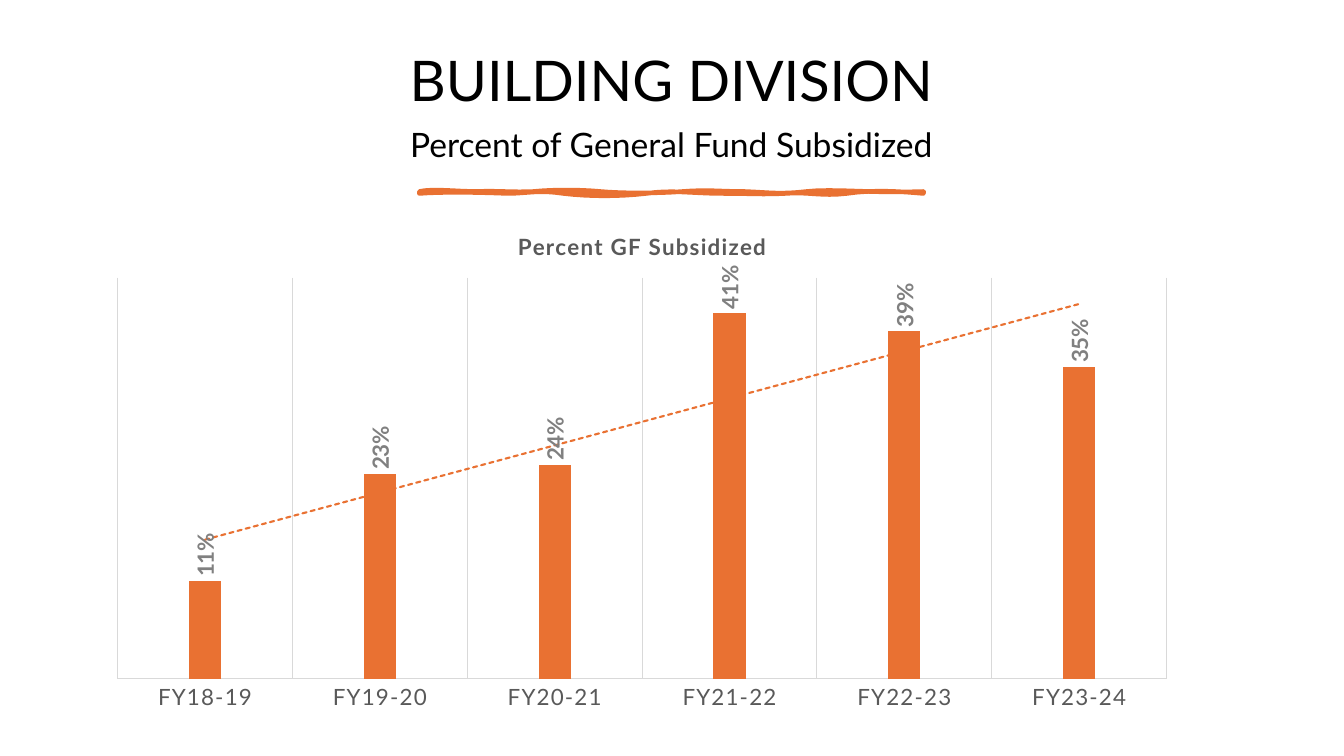
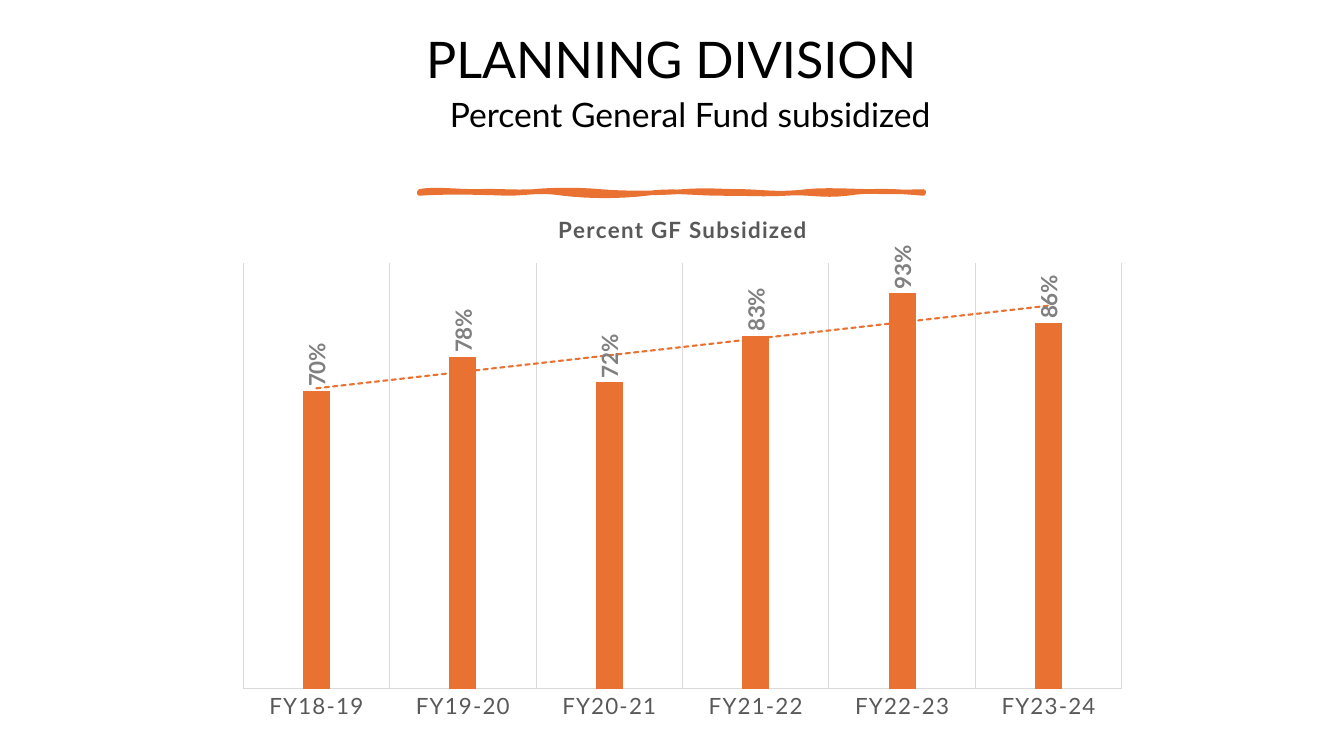
"""Build two slides charting the General Fund share of division budgets."""
import dataclasses

import lxml.etree
import pptx
import pptx.chart.data
import pptx.dml.color
import pptx.enum.chart
import pptx.enum.text
import pptx.oxml
import pptx.oxml.ns
import pptx.util

Pt = pptx.util.Pt


@dataclasses.dataclass(frozen=True)
class Theme:
    font: str = "Lato"
    black: str = "000000"
    accent: str = "E97132"
    axis_text: str = "595959"
    label_text: str = "808080"
    grid: str = "D9D9D9"
    subtitle_size: int = 24
    chart_size: int = 16
    base_size: int = 10
    letter_spacing: str = "100"


theme = Theme()

YEARS = ["FY18-19", "FY19-20", "FY20-21", "FY21-22", "FY22-23", "FY23-24"]
SERIES_NAME = "Percent GF Subsidized"
TITLE_LEFT, TEXT_WIDTH = 50, 859

SLIDES = [
    {
        "title": ("BUILDING DIVISION", 40, TITLE_LEFT, 33, 53),
        "subtitle": ("Percent of General Fund Subsidized", theme.subtitle_size, TITLE_LEFT, 86, 38),
        "chart": (68.4, 151.2, 780.5, 362.9),
        "plot": (0.02, 0.13, 0.96, 0.79),
        "values": [0.11, 0.23, 0.24, 0.41, 0.39, 0.35],
        "maximum": 0.45,
    },
    {
        "title": ("PLANNING DIVISION", 36, TITLE_LEFT, 21.6, 45.4),
        "subtitle": ("Percent General Fund subsidized", theme.subtitle_size, 63.5, 67, 33),
        "chart": (160.6, 138.2, 653.8, 384.5),
        "plot": (0.02, 0.13, 0.96, 0.79),
        "values": [0.7, 0.78, 0.72, 0.83, 0.93, 0.86],
        "maximum": 1,
    },
]

RULE_START = (299.5, 136.8)
RULE_CURVES = [
    ((308.2, 134.6), (326.9, 136.8), (340.6, 136.8)),
    ((354.2, 136.1), (366.5, 137.5), (380.9, 136.8)),
    ((395.3, 135.4), (413.3, 135.4), (429.1, 136.8)),
    ((444.2, 138.2), (470.2, 138.2), (487.4, 136.8)),
    ((505.4, 135.4), (514.1, 136.8), (532.1, 136.8)),
    ((549.4, 137.5), (557.3, 139), (576, 136.8)),
    ((594.7, 134.6), (624.2, 138.2), (659.5, 136.8)),
    ((660.2, 137.5), (659.5, 137.5), (659.5, 138.2)),
    ((644.4, 136.8), (622.8, 135.4), (604.8, 138.2)),
    ((586.8, 140.4), (576.7, 136.8), (560.9, 138.2)),
    ((544.3, 139), (537.8, 138.2), (516.2, 138.2)),
    ((494.6, 138.2), (480.2, 135.4), (461.5, 138.2)),
    ((442.1, 140.4), (421.2, 140.4), (402.5, 138.2)),
    ((384.5, 135.4), (376.6, 138.2), (362.2, 138.2)),
    ((347.8, 137.5), (315.4, 136.8), (299.5, 138.2)),
]
CURVE_STEPS = 8

TRENDLINE = f"""<c:trendline {pptx.oxml.ns.nsdecls("c", "a")}>
<c:spPr><a:ln w="19050" cap="rnd"><a:solidFill><a:srgbClr val="{theme.accent}"/></a:solidFill>
<a:prstDash val="sysDash"/></a:ln></c:spPr>
<c:trendlineType val="linear"/><c:dispRSqr val="0"/><c:dispEq val="0"/></c:trendline>"""


def color(value):
    return pptx.dml.color.RGBColor.from_string(value)


def style_font(font, size, value, bold=False):
    font.name = theme.font
    font.size = Pt(size)
    font.bold = bold
    font.color.rgb = color(value)


rule_points = []
start = RULE_START
for first, second, end in RULE_CURVES:
    for step in range(1, CURVE_STEPS + 1):
        t = step / CURVE_STEPS
        u = 1 - t
        rule_points.append(tuple(
            Pt(u**3 * a + 3 * u * u * t * b + 3 * u * t * t * c + t**3 * d)
            for a, b, c, d in zip(start, first, second, end)
        ))
    start = end

deck = pptx.Presentation()
deck.slide_width, deck.slide_height = Pt(960), Pt(540)

for content in SLIDES:
    page = deck.slides.add_slide(deck.slide_layouts[6])

    for text, size, left, top, height in (content["title"], content["subtitle"]):
        box = page.shapes.add_textbox(Pt(left), Pt(top), Pt(TEXT_WIDTH), Pt(height))
        frame = box.text_frame
        frame.word_wrap = True
        frame.vertical_anchor = pptx.enum.text.MSO_ANCHOR.MIDDLE
        para = frame.paragraphs[0]
        para.text = text
        para.alignment = pptx.enum.text.PP_ALIGN.CENTER
        para.line_spacing = 0.9
        style_font(para.font, size, theme.black)

    builder = page.shapes.build_freeform(Pt(RULE_START[0]), Pt(RULE_START[1]))
    builder.add_line_segments(rule_points, close=True)
    rule = builder.convert_to_shape()
    rule.shadow.inherit = False
    rule.fill.solid()
    rule.fill.fore_color.rgb = color(theme.accent)
    rule.line.color.rgb = color(theme.accent)
    rule.line.width = Pt(3.25)

    data = pptx.chart.data.CategoryChartData(number_format="0%")
    data.categories = YEARS
    data.add_series(SERIES_NAME, content["values"])
    chart = page.shapes.add_chart(
        pptx.enum.chart.XL_CHART_TYPE.COLUMN_CLUSTERED,
        *(Pt(length) for length in content["chart"]), data,
    ).chart
    style_font(chart.font, theme.base_size, theme.black)
    chart.has_legend = False
    chart.has_title = True
    chart.chart_title.include_in_layout = False
    para = chart.chart_title.text_frame.paragraphs[0]
    span = para.add_run()
    span.text = SERIES_NAME
    style_font(span.font, theme.chart_size, theme.axis_text, bold=True)

    years_axis = chart.category_axis
    years_axis.major_tick_mark = pptx.enum.chart.XL_TICK_MARK.NONE
    years_axis.has_major_gridlines = True
    style_font(years_axis.tick_labels.font, theme.chart_size, theme.axis_text)
    for line in (years_axis.format.line, years_axis.major_gridlines.format.line):
        line.color.rgb = color(theme.grid)
        line.width = Pt(0.75)

    share_axis = chart.value_axis
    share_axis.has_major_gridlines = False
    share_axis.minimum_scale = 0
    share_axis.maximum_scale = content["maximum"]
    share_axis.visible = False

    plot = chart.plots[0]
    plot.gap_width = 444
    plot.overlap = -90
    plot.vary_by_categories = False
    series = plot.series[0]
    series.invert_if_negative = False
    series.format.fill.solid()
    series.format.fill.fore_color.rgb = color(theme.accent)
    labels = series.data_labels
    labels.show_value = True
    labels.number_format = "0%"
    labels.number_format_is_linked = False
    labels.position = pptx.enum.chart.XL_LABEL_POSITION.OUTSIDE_END
    style_font(labels.font, theme.chart_size, theme.label_text, bold=True)

    root = chart.element
    for body in root.xpath(".//c:ser/c:dLbls/c:txPr/a:bodyPr"):
        body.set("rot", "-5400000")
        body.set("vert", "horz")
    for properties in root.xpath(".//c:title//a:rPr | .//c:catAx//a:defRPr"):
        properties.set("spc", theme.letter_spacing)
    root.xpath(".//c:ser/c:cat")[0].addprevious(pptx.oxml.parse_xml(TRENDLINE))

    plot_area = root.xpath(".//c:plotArea")[0]
    for layout in plot_area.xpath("c:layout"):
        plot_area.remove(layout)
    layout = pptx.oxml.parse_xml(
        f'<c:layout {pptx.oxml.ns.nsdecls("c")}><c:manualLayout/></c:layout>')
    settings = [("layoutTarget", "inner"), ("xMode", "edge"), ("yMode", "edge")]
    settings += zip("xywh", content["plot"])
    for name, value in settings:
        lxml.etree.SubElement(layout[0], pptx.oxml.ns.qn(f"c:{name}"), val=str(value))
    plot_area.insert(0, layout)

deck.save("out.pptx")
